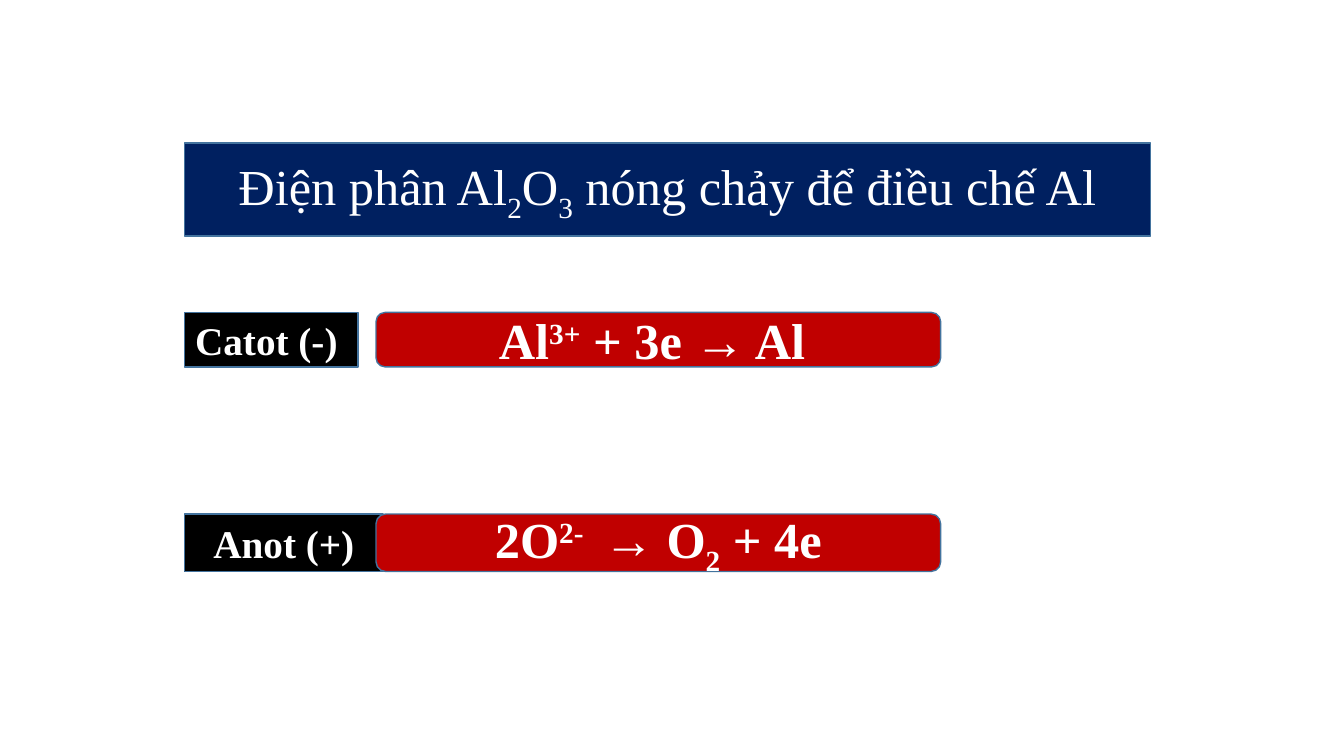
from lxml.etree import SubElement
from pptx import Presentation
from pptx.dml.color import RGBColor
from pptx.enum.shapes import MSO_SHAPE as SHAPE
from pptx.enum.text import MSO_ANCHOR, MSO_AUTO_SIZE, PP_ALIGN
from pptx.oxml.ns import qn
from pptx.util import Inches, Pt

COLORS = {
    "heading": "002060",
    "electrode": "000000",
    "reaction": "C00000",
    "outline": "43739E",
    "text": "FFFFFF",
}
SUB, SUPER = "-25000", "30000"
LEFT, REACTION_LEFT, REACTION_WIDTH = 1.83, 3.73, 5.6

HEADING = [("Điện phân Al", None), ("2", SUB), ("O", None), ("3", SUB),
           (" nóng chảy để điều chế Al", None)]

# electrode, its shape and width, top and height of the row, half-reaction
ELECTRODES = [
    ("Catot (-) ", SHAPE.RECTANGLE, 1.72, 3.1, 0.54,
     [("Al", None), ("3+", SUPER), (" + 3e → Al ", None)]),
    ("Anot (+)", SHAPE.FLOWCHART_PROCESS, 1.97, 5.1, 0.57,
     [("2O", None), ("2- ", SUPER), (" → O", None), ("2", SUB),
      (" + 4e", None)]),
]


def rgb(key):
    return RGBColor.from_string(COLORS[key])


def paint(box, color):
    box.shadow.inherit = False
    box.fill.solid()
    box.fill.fore_color.rgb = rgb(color)
    box.line.color.rgb = rgb("outline")
    box.line.width = Pt(1)


def write_formula(box, parts, size, bold):
    """Write (text, baseline) parts as one centred line."""
    frame = box.text_frame
    frame.word_wrap = True
    frame.auto_size = MSO_AUTO_SIZE.NONE
    frame.vertical_anchor = MSO_ANCHOR.MIDDLE
    line = frame.paragraphs[0]
    line.alignment = PP_ALIGN.CENTER
    font_format = {"name": "Times New Roman", "size": Pt(size), "bold": bold}
    for text, baseline in parts:
        run = line.add_run()
        run.text = text
        for attribute, value in font_format.items():
            setattr(run.font, attribute, value)
        run.font.color.rgb = rgb("text")
        if baseline:
            run.font._element.set("baseline", baseline)


def add_heading(slide):
    """Turn the title placeholder into a rounded banner."""
    heading = slide.shapes.title
    bounds = {"left": LEFT, "top": 1.42, "width": 9.58, "height": 0.92}
    for attribute, value in bounds.items():
        setattr(heading, attribute, Inches(value))
    outline = SubElement(heading._element.spPr, qn("a:prstGeom"),
                         prst="roundRect")
    SubElement(outline, qn("a:avLst"))
    paint(heading, "heading")
    write_formula(heading, HEADING, 36, False)


def add_box(slide, shape, bounds, color, parts, size):
    box = slide.shapes.add_shape(shape, *map(Inches, bounds))
    paint(box, color)
    write_formula(box, parts, size, True)


def main():
    deck = Presentation()
    deck.slide_width, deck.slide_height = Inches(13.33), Inches(7.5)
    slide = deck.slides.add_slide(deck.slide_layouts[5])
    add_heading(slide)
    for electrode, shape, width, top, height, reaction in ELECTRODES:
        add_box(slide, shape, (LEFT, top, width, height),
                "electrode", [(electrode, None)], 28)
        add_box(slide, SHAPE.ROUNDED_RECTANGLE,
                (REACTION_LEFT, top, REACTION_WIDTH, height),
                "reaction", reaction, 36)
    deck.save("out.pptx")


if __name__ == "__main__":
    main()
